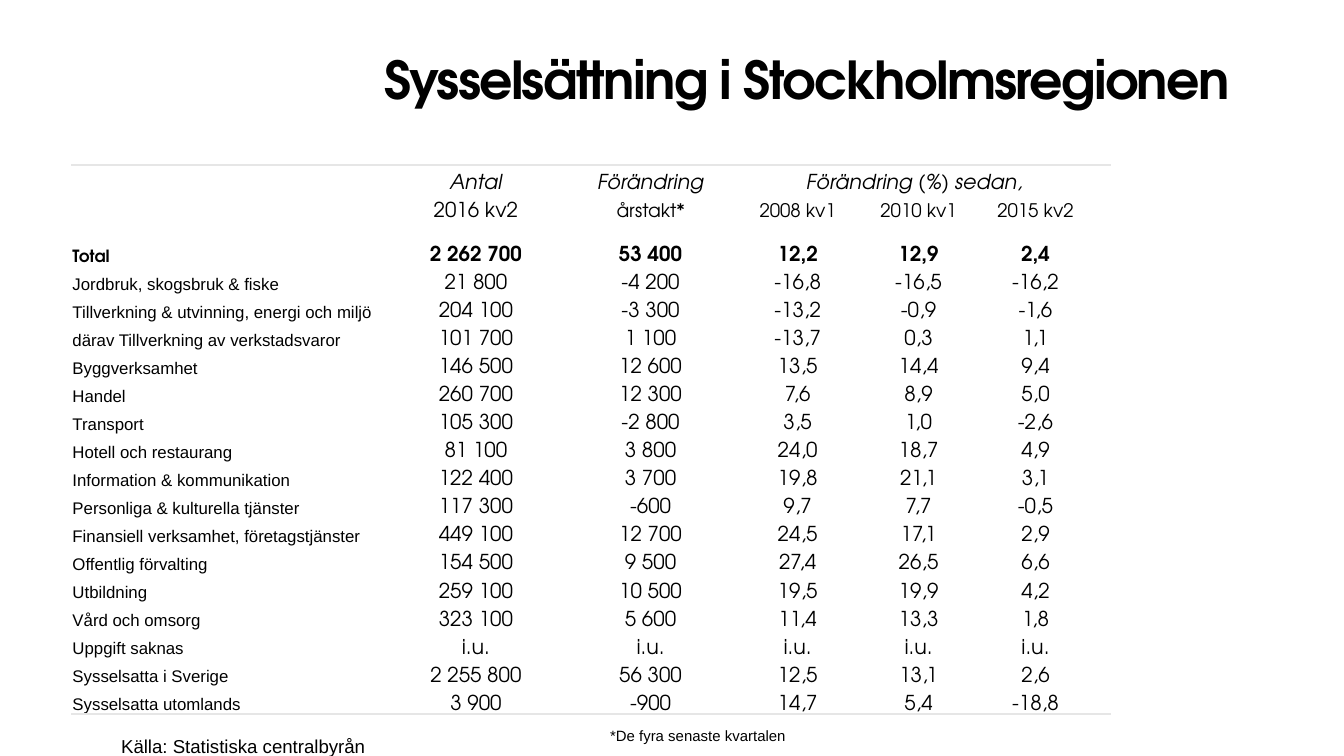
from lxml import etree
from pptx import Presentation
from pptx import util as u
from pptx.dml.color import RGBColor
from pptx.enum import text
from pptx.oxml import ns

HEADING_FONT, BODY_FONT = "TeX Gyre Adventor", "Arial"
BLACK, RULE = "000000", "E6E6E6"
NO_STYLE = "{2D5ABB26-0587-4C30-8999-92F81FD0307C}"
COLUMN_WIDTHS = [6.02, 3.25, 3.35, 2.21, 2.36, 2.06, 0.4]
ROW_HEIGHT, TOTAL_HEIGHT = 0.53, 0.84

HEADERS = [
    ["", "Antal", "Förändring", "Förändring (%) sedan,"],
    ["", "2016 kv2", "årstakt*", "2008 kv1", "2010 kv1", "2015 kv2"],
]
FIGURES = [
    ["Total", "2 262 700", "53 400", "12,2", "12,9", "2,4"],
    ["Jordbruk, skogsbruk & fiske", "21 800", "-4 200", "-16,8", "-16,5", "-16,2"],
    ["Tillverkning & utvinning, energi och miljö", "204 100", "-3 300", "-13,2", "-0,9", "-1,6"],
    ["därav Tillverkning av verkstadsvaror", "101 700", "1 100", "-13,7", "0,3", "1,1"],
    ["Byggverksamhet", "146 500", "12 600", "13,5", "14,4", "9,4"],
    ["Handel", "260 700", "12 300", "7,6", "8,9", "5,0"],
    ["Transport", "105 300", "-2 800", "3,5", "1,0", "-2,6"],
    ["Hotell och restaurang", "81 100", "3 800", "24,0", "18,7", "4,9"],
    ["Information & kommunikation", "122 400", "3 700", "19,8", "21,1", "3,1"],
    ["Personliga & kulturella tjänster", "117 300", "-600", "9,7", "7,7", "-0,5"],
    ["Finansiell verksamhet, företagstjänster", "449 100", "12 700", "24,5", "17,1", "2,9"],
    ["Offentlig förvalting", "154 500", "9 500", "27,4", "26,5", "6,6"],
    ["Utbildning", "259 100", "10 500", "19,5", "19,9", "4,2"],
    ["Vård och omsorg", "323 100", "5 600", "11,4", "13,3", "1,8"],
    ["Uppgift saknas", "i.u.", "i.u.", "i.u.", "i.u.", "i.u."],
    ["Sysselsatta i Sverige", "2 255 800", "56 300", "12,5", "13,1", "2,6"],
    ["Sysselsatta utomlands", "3 900", "-900", "14,7", "5,4", "-18,8"],
]
ROWS = HEADERS + FIGURES
TOTAL_ROW = len(HEADERS)


def color(value):
    return RGBColor.from_string(value)


class SlideBuilder:
    def __init__(self, prs):
        self.s = prs.slides.add_slide(prs.slide_layouts[5])

    def run(self, p, words, size, font, bold=False, italic=False):
        r = p.add_run()
        r.text = words
        r.font.size, r.font.name = u.Pt(size), font
        r.font.bold, r.font.italic = bold, italic
        r.font.color.rgb = color(BLACK)
        return r

    def frame(self, sp, wrap):
        """Return the shape's text frame, without margins and anchored at the top."""
        tf = sp.text_frame
        tf.margin_left = tf.margin_top = tf.margin_right = tf.margin_bottom = 0
        tf.vertical_anchor = text.MSO_ANCHOR.TOP
        tf.auto_size = text.MSO_AUTO_SIZE.NONE
        tf.word_wrap = wrap
        return tf

    def title(self, words, left, top, width, height):
        sp = self.s.shapes.title
        sp.left, sp.top = u.Cm(left), u.Cm(top)
        sp.width, sp.height = u.Cm(width), u.Cm(height)
        p = self.frame(sp, True).paragraphs[0]
        p.alignment = text.PP_ALIGN.LEFT
        r = self.run(p, words, 28, HEADING_FONT, bold=True)
        r.font._element.set("spc", "-90")

    def note(self, words, size, left, top, width, height):
        sp = self.s.shapes.add_textbox(u.Cm(left), u.Cm(top), u.Cm(width), u.Cm(height))
        p = self.frame(sp, False).paragraphs[0]
        p.line_spacing = u.Pt(24)
        self.run(p, words, size, BODY_FONT)

    def border(self, cell, side):
        ln = etree.SubElement(cell._tc.get_or_add_tcPr(), ns.qn(f"a:{side}"), w="12700")
        fill = etree.SubElement(ln, ns.qn("a:solidFill"))
        etree.SubElement(fill, ns.qn("a:srgbClr"), val=RULE)

    def cell(self, cell, words, row, col):
        cell.margin_left = cell.margin_right = cell.margin_top = u.Cm(0.02)
        cell.margin_bottom = 0
        cell.vertical_anchor = text.MSO_ANCHOR.BOTTOM
        if row == 0:
            self.border(cell, "lnT")
        if row == len(ROWS) - 1:
            self.border(cell, "lnB")
        cell.fill.background()
        p = cell.text_frame.paragraphs[0]
        if not words:
            etree.SubElement(p._p, ns.qn("a:endParaRPr"), sz="900")
            return
        total = row == TOTAL_ROW
        if col == 0:
            self.run(p, words, 9, HEADING_FONT if total else BODY_FONT, bold=total)
        else:
            p.alignment = text.PP_ALIGN.CENTER
            size = 10 if row == 1 and col > 1 else 11
            self.run(p, words, size, HEADING_FONT, bold=total, italic=row == 0)

    def table(self, left, top):
        heights = [TOTAL_HEIGHT if i == TOTAL_ROW else ROW_HEIGHT for i in range(len(ROWS))]
        tbl = self.s.shapes.add_table(
            len(ROWS), len(COLUMN_WIDTHS), u.Cm(left), u.Cm(top),
            u.Cm(sum(COLUMN_WIDTHS)), u.Cm(sum(heights))).table
        tbl.first_row = tbl.horz_banding = False
        tbl._tbl.tblPr.find(ns.qn("a:tableStyleId")).text = NO_STYLE
        for column, width in zip(tbl.columns, COLUMN_WIDTHS):
            column.width = u.Cm(width)
        for i, (words, height) in enumerate(zip(ROWS, heights)):
            tbl.rows[i].height = u.Cm(height)
            for j in range(len(COLUMN_WIDTHS)):
                self.cell(tbl.cell(i, j), words[j] if j < len(words) else "", i, j)
        tbl.cell(0, 3).merge(tbl.cell(0, 5))


def main():
    prs = Presentation()
    prs.slide_width, prs.slide_height = u.Cm(25.4), u.Cm(14.29)
    slide = SlideBuilder(prs)
    slide.title("Sysselsättning i Stockholmsregionen", 7.26, 0.89, 23.37, 2.03)
    slide.note("Källa: Statistiska centralbyrån", 10, 2.29, 13.46, 2.54, 1.07)
    slide.table(1.35, 3.12)
    slide.note("*De fyra senaste kvartalen", 8, 11.53, 13.23, 2.54, 2.54)
    prs.save("out.pptx")


if __name__ == "__main__":
    main()
